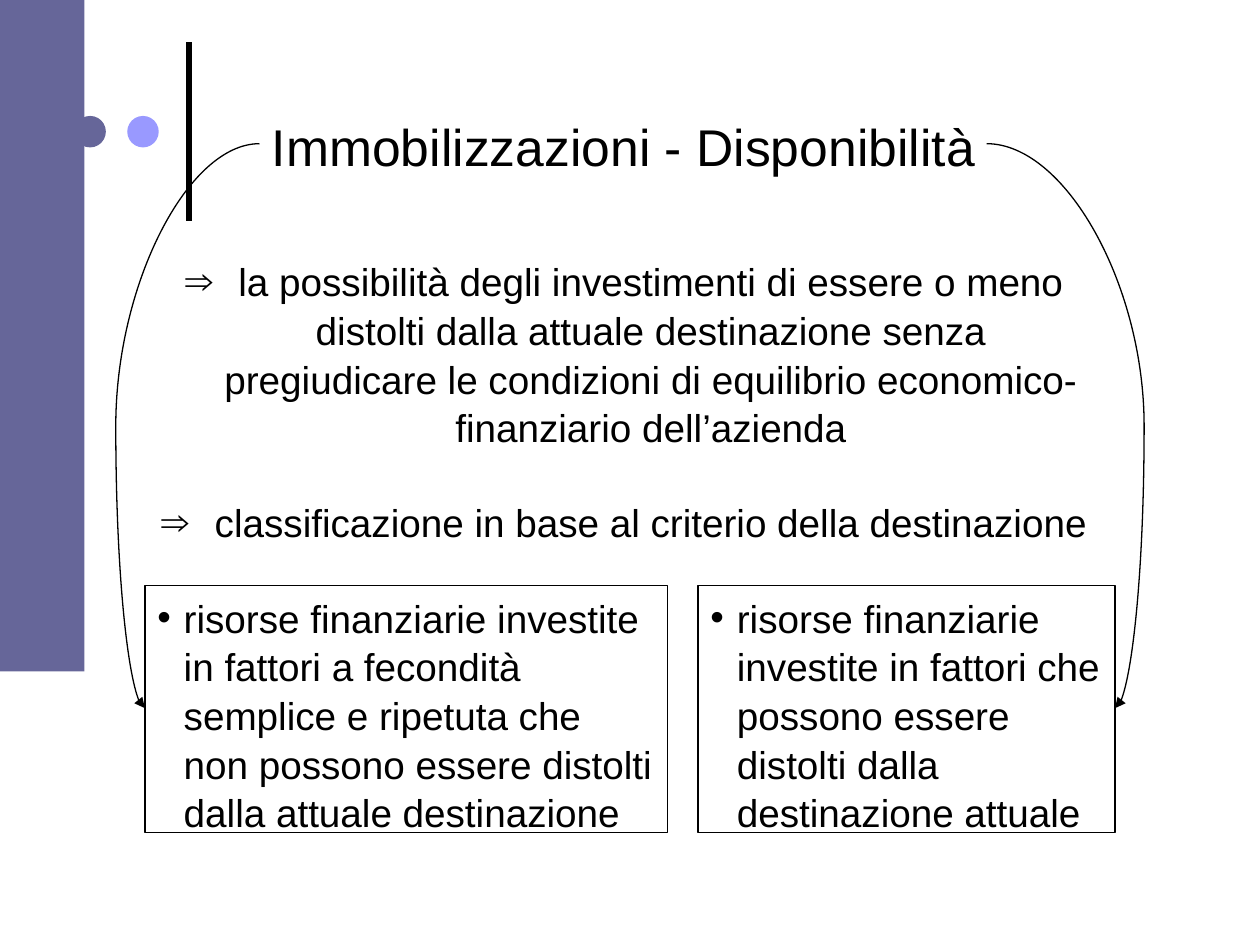
from typing import NamedTuple

from pptx import Presentation
from pptx.dml.color import RGBColor
from pptx.enum import shapes, text
from pptx.oxml import parse_xml
from pptx.oxml.ns import nsdecls
from pptx.util import Inches, Pt

BLACK, SLATE, LILAC = "000000", "666699", "9999FF"
FONT = "Arial"
BODY_SIZE = 22.1
LINE_PITCH = 1.05
CURVE_Y = 1.14, 5.62


class Box(NamedTuple):
    left: float
    top: float
    width: float
    height: float

    def emu(self) -> list:
        return [Inches(v) for v in self]


class Decoration(NamedTuple):
    kind: shapes.MSO_SHAPE
    box: Box
    color: str


class Category(NamedTuple):
    box: Box
    wording: str


class Curve(NamedTuple):
    start_x: float
    end_x: float
    bend: int


DECORATIONS = [
    Decoration(shapes.MSO_SHAPE.OVAL, Box(0.59, 0.92, 0.25, 0.25), SLATE),
    Decoration(shapes.MSO_SHAPE.OVAL, Box(1.01, 0.92, 0.25, 0.25), LILAC),
    Decoration(shapes.MSO_SHAPE.RECTANGLE, Box(0, 0, 0.67, 5.33), SLATE),
]
DEFINITIONS = [
    "la possibilità degli investimenti di essere o meno distolti dalla attuale "
    "destinazione senza pregiudicare le condizioni di equilibrio "
    "economico-finanziario dell’azienda",
    "classificazione in base al criterio della destinazione",
]
CATEGORIES = [
    Category(Box(1.15, 4.65, 4.15, 1.96),
             "risorse finanziarie investite in fattori a fecondità semplice e ripetuta "
             "che non possono essere distolti dalla attuale destinazione"),
    Category(Box(5.54, 4.65, 3.31, 1.96),
             "risorse finanziarie investite in fattori che possono essere distolti "
             "dalla destinazione attuale"),
]
CURVES = [Curve(2.06, 1.15, 125400), Curve(7.83, 8.85, 122600)]


def rgb(color: str) -> RGBColor:
    return RGBColor.from_string(color)


def add_run(p, wording: str, size: float) -> None:
    p.line_spacing = LINE_PITCH
    r = p.add_run()
    r.text = wording
    r.font.name, r.font.size = FONT, Pt(size)
    r.font.color.rgb = rgb(BLACK)


def add_bullet(p, char: str, indent: float) -> None:
    """Give the paragraph a hanging bullet."""
    pPr = p._p.get_or_add_pPr()
    pPr.set("marL", str(Inches(indent)))
    pPr.set("indent", str(-Inches(indent)))
    pPr.append(parse_xml(f'<a:buFont {nsdecls("a")} typeface="{FONT}"/>'))
    pPr.append(parse_xml(f'<a:buChar {nsdecls("a")} char="{char}"/>'))


def add_line(s, kind: shapes.MSO_CONNECTOR, start: tuple, end: tuple, weight: float):
    line = s.shapes.add_connector(kind, *(Inches(v) for v in start + end))
    line.line.color.rgb = rgb(BLACK)
    line.line.width = Pt(weight)
    line._element.spPr.append(parse_xml(f'<a:effectLst {nsdecls("a")}/>'))
    return line


def add_decoration(s, item: Decoration) -> None:
    sp = s.shapes.add_shape(item.kind, *item.box.emu())
    sp.shadow.inherit = False
    sp.fill.solid()
    sp.fill.fore_color.rgb = rgb(item.color)
    sp.line.fill.background()


def add_title(s) -> None:
    tf = s.shapes.add_textbox(*Box(2.06, 0.84, 5.85, 0.6).emu()).text_frame
    tf.word_wrap = False
    add_run(tf.paragraphs[0], "Immobilizzazioni - Disponibilità", 29.5)


def add_definitions(s) -> None:
    tf = s.shapes.add_textbox(*Box(1.14, 1.98, 7.63, 2.34).emu()).text_frame
    tf.word_wrap = True
    for i, wording in enumerate(DEFINITIONS):
        p = tf.add_paragraph() if i else tf.paragraphs[0]
        p.alignment = text.PP_ALIGN.CENTER
        add_run(p, wording, BODY_SIZE)
        if i:
            p.space_before = Pt(26.6)
        add_bullet(p, "⇒", 0.42)


def add_category(s, item: Category) -> None:
    sp = s.shapes.add_shape(shapes.MSO_SHAPE.RECTANGLE, *item.box.emu())
    sp.shadow.inherit = False
    sp.fill.background()
    sp.line.color.rgb = rgb(BLACK)
    sp.line.width = Pt(0.75)
    tf = sp.text_frame
    tf.word_wrap = True
    tf.vertical_anchor = text.MSO_ANCHOR.TOP
    p = tf.paragraphs[0]
    p.alignment = text.PP_ALIGN.LEFT
    add_run(p, item.wording, BODY_SIZE)
    add_bullet(p, "•", 0.21)


def add_curve(s, item: Curve) -> None:
    """Draw a curved arrow that bulges beyond its end point."""
    top, bottom = CURVE_Y
    line = add_line(s, shapes.MSO_CONNECTOR.CURVE, (item.start_x, top),
                    (item.end_x, bottom), 0.75)
    line.line._get_or_add_ln().append(
        parse_xml(f'<a:tailEnd {nsdecls("a")} type="triangle"/>'))
    line._element.spPr.prstGeom.get_or_add_avLst().append(
        parse_xml(f'<a:gd {nsdecls("a")} name="adj1" fmla="val {item.bend}"/>'))


def main() -> None:
    prs = Presentation()
    prs.slide_width, prs.slide_height = Inches(10), Inches(7.5)
    s = prs.slides.add_slide(prs.slide_layouts[6])
    add_line(s, shapes.MSO_CONNECTOR.STRAIGHT, (1.5, 1.75), (1.5, 0.33), 3)
    for item in DECORATIONS:
        add_decoration(s, item)
    add_title(s)
    add_definitions(s)
    for item in CATEGORIES:
        add_category(s, item)
    for item in CURVES:
        add_curve(s, item)
    prs.save("out.pptx")


if __name__ == "__main__":
    main()
